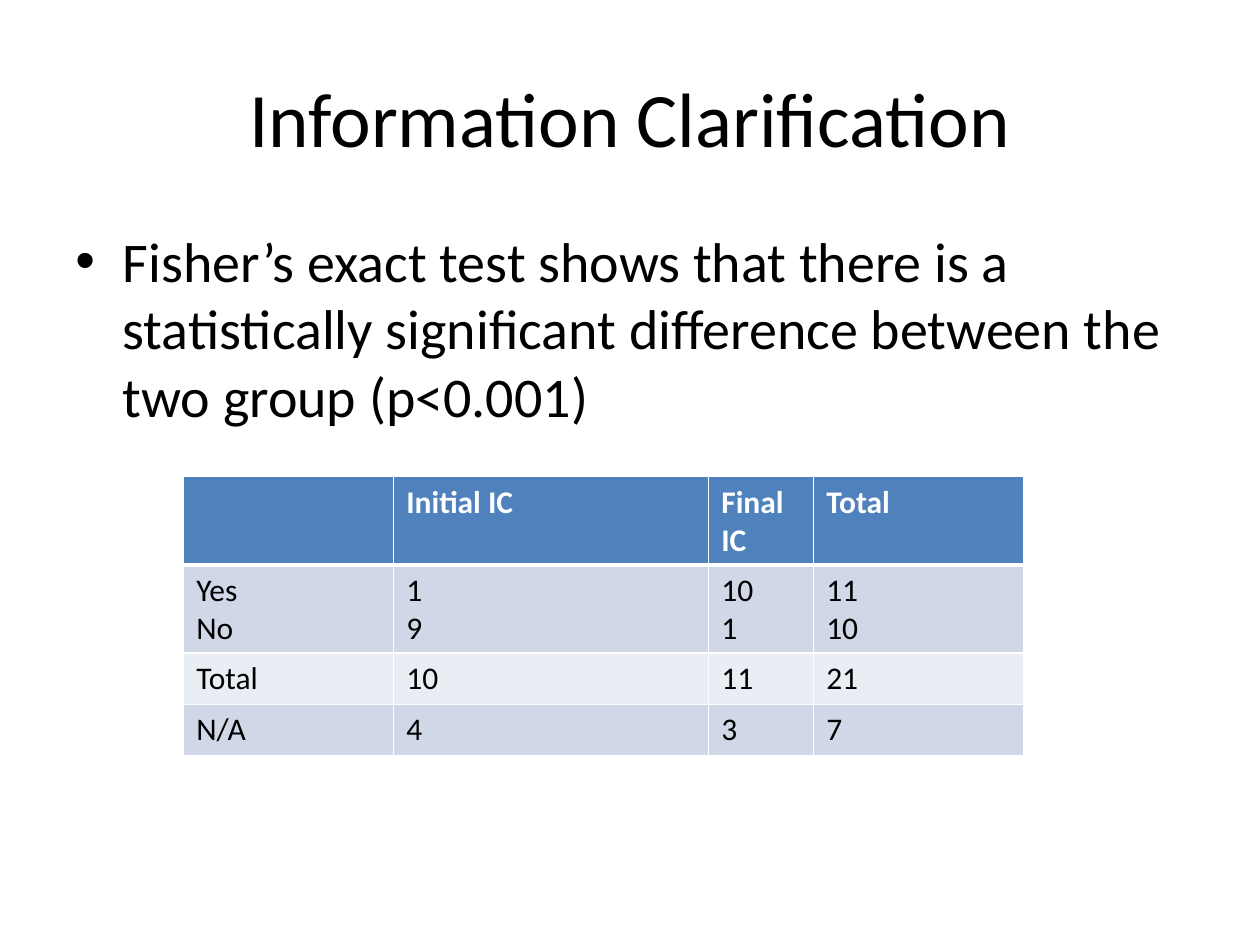
from lxml import etree
from pptx import Presentation
from pptx import util as u
from pptx.dml.color import RGBColor
from pptx.enum import text
from pptx.oxml import ns

Pt = u.Pt


def colour(value):
    return RGBColor.from_string(value)


def add_element(parent, tag, **attributes):
    return etree.SubElement(parent, ns.qn(tag), attributes)


class SlideBuilder:
    font = "Calibri"
    ink, white = "000000", "FFFFFF"
    header_fill = "4F81BD"
    band_fills = ("D0D8E8", "E9EDF4")

    def __init__(self, slide):
        self.slide = slide

    def format_paragraph(self, paragraph, ink, **values):
        for name, value in {"name": self.font, **values}.items():
            setattr(paragraph.font, name, value)
        paragraph.font.color.rgb = colour(ink)

    def text_box(self, wording, box, size, anchor, alignment):
        shape = self.slide.shapes.add_textbox(*map(Pt, box))
        frame = shape.text_frame
        frame.word_wrap = True
        frame.vertical_anchor = anchor
        frame.text = wording
        paragraph = frame.paragraphs[0]
        paragraph.alignment = alignment
        self.format_paragraph(paragraph, self.ink, size=Pt(size))
        return paragraph

    def bullet(self, paragraph, indent):
        properties = paragraph._p.get_or_add_pPr()
        properties.set("marL", str(Pt(indent)))
        properties.set("indent", str(-Pt(indent)))
        spacing = add_element(properties, "a:spcBef")
        add_element(spacing, "a:spcPct", val="20000")
        add_element(properties, "a:buFont", typeface="Arial")
        add_element(properties, "a:buChar", char="•")

    def borders(self, cell, **widths):
        properties = cell._tc.get_or_add_tcPr()
        for side in "LRTB":
            line = add_element(properties, f"a:ln{side}", w=str(Pt(widths.get(side, 1))))
            fill = add_element(line, "a:solidFill")
            add_element(fill, "a:srgbClr", val=self.white)

    def table(self, rows, left, top, column_widths, row_height):
        shape = self.slide.shapes.add_table(
            len(rows), len(column_widths), Pt(left), Pt(top),
            Pt(sum(column_widths)), Pt(row_height * len(rows)))
        table = shape.table
        for column, width in zip(table.columns, column_widths):
            column.width = Pt(width)
        for row_index, row in enumerate(rows):
            header = row_index == 0
            fill = self.header_fill if header else self.band_fills[(row_index - 1) % 2]
            # Heavy rule between the header and the body
            rule = {0: {"B": 3}, 1: {"T": 3}}.get(row_index, {})
            for column_index, wording in enumerate(row):
                cell = table.cell(row_index, column_index)
                self.borders(cell, **rule)
                cell.fill.solid()
                cell.fill.fore_color.rgb = colour(fill)
                cell.text = wording
                for paragraph in cell.text_frame.paragraphs:
                    self.format_paragraph(paragraph, self.white if header else self.ink,
                                          size=Pt(18), bold=header)


def main():
    presentation = Presentation()
    presentation.slide_width, presentation.slide_height = Pt(720), Pt(540)
    builder = SlideBuilder(presentation.slides.add_slide(presentation.slide_layouts[6]))

    # Title
    builder.text_box("Information Clarification", (36, 21.6, 648, 90), 44,
                     text.MSO_ANCHOR.MIDDLE, text.PP_ALIGN.CENTER)

    # Finding
    finding = builder.text_box(
        "Fisher’s exact test shows that there is a statistically significant "
        "difference between the two group (p<0.001)",
        (36, 126, 648, 356.4), 32, text.MSO_ANCHOR.TOP, text.PP_ALIGN.LEFT)
    builder.bullet(finding, 27)

    # Counts by group
    builder.table([
        ("", "Initial IC", "Final IC", "Total"),
        ("Yes\nNo", "1\n9", "10\n1", "11\n10"),
        ("Total", "10", "11", "21"),
        ("N/A", "4", "3", "7"),
    ], left=105, top=272.4, column_widths=(120, 180, 60, 120), row_height=29.2)

    presentation.save("out.pptx")


if __name__ == "__main__":
    main()
